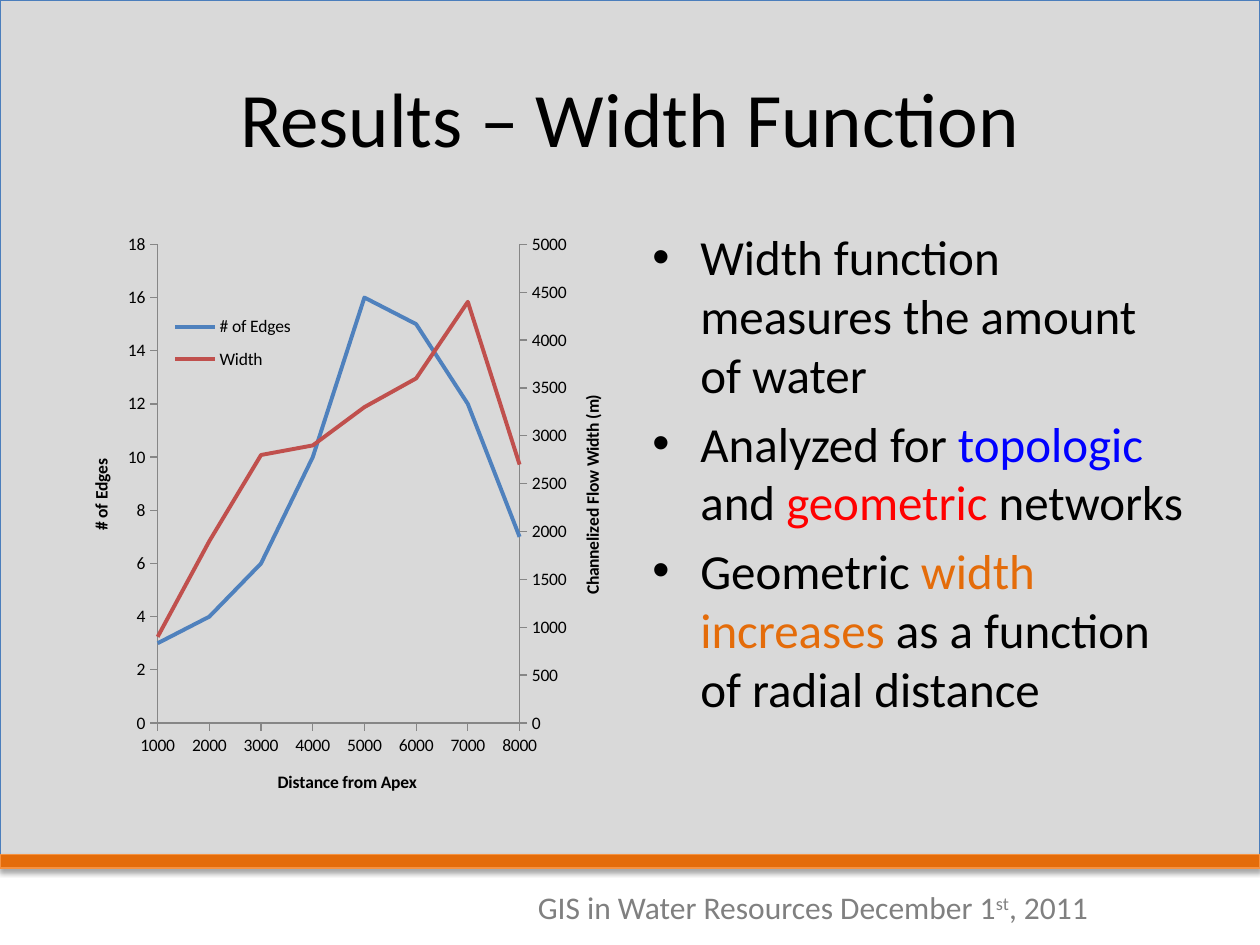
from copy import deepcopy

from lxml import etree
from pptx import Presentation
from pptx import util as u
from pptx.chart.data import CategoryChartData
from pptx.dml.color import RGBColor
from pptx.enum import chart as ch, shapes, text
from pptx.oxml import parse_xml
from pptx.oxml.ns import nsdecls, qn

COLORS = {
    "panel": "D9D9D9", "panel_line": "4B7EBC", "accent": "E46C0A", "accent_line": "F69240",
    "text": "000000", "footer": "808080", "topologic": "0000FF", "geometric": "FF0000",
    "edges": "4F81BD", "width": "C0504D", "axis": "868686",
}
DISTANCES = [str(1000 * step) for step in range(1, 9)]
EDGES = [3, 4, 6, 10, 16, 15, 12, 7]
WIDTHS = [900, 1900, 2800, 2900, 3300, 3600, 4400, 2700]


def color(name):
    return RGBColor.from_string(COLORS[name])


def inches(*lengths):
    return [u.Inches(length) for length in lengths]


def new_layout(element, x, y, w, h, inner=False):
    """Replace the layout of a chart part, in fractions of the chart."""
    target = '<c:layoutTarget val="inner"/>' if inner else ""
    sizes = "".join(f'<c:{tag} val="{value}"/>' for tag, value in zip("xywh", (x, y, w, h)))
    for old in element.findall(qn("c:layout")):
        element.remove(old)
    return parse_xml(
        f'<c:layout {nsdecls("c")}><c:manualLayout>{target}'
        f'<c:xMode val="edge"/><c:yMode val="edge"/>{sizes}</c:manualLayout></c:layout>')


def set_after(element, previous, tag, value):
    """Set a child's value, adding the child after the previous one if missing."""
    child = element.find(qn(tag))
    if child is None:
        child = parse_xml(f'<{tag} {nsdecls("c")}/>')
        element.find(qn(previous)).addnext(child)
    child.set("val", value)


class SlideBuilder:
    font = "Calibri"

    def __init__(self, deck):
        self.slide = deck.slides.add_slide(deck.slide_layouts[6])

    def band(self, top, height, fill, line):
        band = self.slide.shapes.add_shape(
            shapes.MSO_SHAPE.RECTANGLE, *inches(0, top, 10, height))
        band.shadow.inherit = False
        band.fill.solid()
        band.fill.fore_color.rgb = color(fill)
        band.line.color.rgb = color(line)
        band.line.width = u.Pt(0.75)
        effects = band._element.spPr.find(qn("a:effectLst"))
        effects.append(parse_xml(
            f'<a:outerShdw {nsdecls("a")} blurRad="{u.Pt(3.1)}" dist="{u.Pt(1.8)}" dir="5400000" '
            'rotWithShape="0"><a:srgbClr val="000000"><a:alpha val="35000"/></a:srgbClr>'
            '</a:outerShdw>'))

    def text(self, place, paragraphs, size, wrap=True, bullets=False, centered=False):
        """Each paragraph is a list of (wording, colour name, superscript)."""
        frame = self.slide.shapes.add_textbox(*inches(*place)).text_frame
        frame.word_wrap = wrap
        if centered:
            frame.vertical_anchor = text.MSO_ANCHOR.MIDDLE
        for index, spans in enumerate(paragraphs):
            para = frame.add_paragraph() if index else frame.paragraphs[0]
            if bullets:
                self.bullet(para)
            if index:
                para.space_before = u.Pt(size * 0.2)
            if centered:
                para.alignment = text.PP_ALIGN.CENTER
            for wording, tint, raised in spans:
                span = para.add_run()
                span.text = wording
                span.font.name = self.font
                span.font.size = u.Pt(size)
                span.font.color.rgb = color(tint)
                if raised:
                    span._r.get_or_add_rPr().set("baseline", "30000")

    def bullet(self, para):
        props = para._p.get_or_add_pPr()
        props.set("marL", str(u.Inches(0.38)))
        props.set("indent", str(-u.Inches(0.38)))
        etree.SubElement(props, qn("a:buFont")).set("typeface", "Arial")
        etree.SubElement(props, qn("a:buChar")).set("char", "•")

    def axis(self, axis, title):
        axis.has_major_gridlines = False
        axis.major_tick_mark = ch.XL_TICK_MARK.OUTSIDE
        axis.format.line.color.rgb = color("axis")
        axis.format.line.width = u.Pt(0.75)
        axis.axis_title.text_frame.text = title
        font = axis.axis_title.text_frame.paragraphs[0].runs[0].font
        font.name, font.size, font.bold = self.font, u.Pt(10), True
        font.color.rgb = color("text")

    def scale(self, axis, top, step, crosses):
        axis.minimum_scale, axis.maximum_scale, axis.major_unit = 0, top, step
        set_after(axis._element, "c:crossAx", "c:crosses", crosses)
        set_after(axis._element, "c:crosses", "c:crossBetween", "midCat")

    def chart(self, place):
        data = CategoryChartData()
        data.categories = DISTANCES
        data.add_series("# of Edges", EDGES)
        data.add_series("Width", WIDTHS)
        chart = self.slide.shapes.add_chart(
            ch.XL_CHART_TYPE.LINE, *inches(*place), data).chart
        chart.has_title = False
        chart.font.name, chart.font.size = self.font, u.Pt(10)
        chart.font.color.rgb = color("text")
        chart.plots[0].vary_by_categories = False
        for series, tint in zip(chart.plots[0].series, ("edges", "width")):
            series.smooth = False
            series.marker.style = ch.XL_MARKER_STYLE.NONE
            series.format.line.color.rgb = color(tint)
            series.format.line.width = u.Pt(2.25)
        self.axis(chart.category_axis, "Distance from Apex")
        self.axis(chart.value_axis, "# of Edges")
        self.scale(chart.value_axis, 18, 2, "autoZero")

        # Legend inside the plot
        chart.has_legend = True
        chart.legend.position = ch.XL_LEGEND_POSITION.LEFT
        chart.legend.include_in_layout = False
        legend = chart.legend._element
        legend.find(qn("c:legendPos")).addnext(new_layout(legend, 0.19, 0.14, 0.23, 0.13))
        self.right_axis(chart)

    def right_axis(self, chart):
        """Move the second series to its own line plot with an axis on the right."""
        area = chart._chartSpace.chart.plotArea
        area.insert(0, new_layout(area, 0.17, 0.04, 0.65, 0.8, inner=True))
        left_plot = area.find(qn("c:lineChart"))
        right_plot = deepcopy(left_plot)
        left_plot.remove(left_plot.findall(qn("c:ser"))[1])
        right_plot.remove(right_plot.findall(qn("c:ser"))[0])
        left_plot.addnext(right_plot)

        left_value, category = area.find(qn("c:valAx")), area.find(qn("c:catAx"))
        right_value, hidden = deepcopy(left_value), deepcopy(category)
        left_value.addnext(right_value)
        right_value.addnext(hidden)
        new_ids = {category.find(qn("c:axId")).get("val"): "5001",
                   left_value.find(qn("c:axId")).get("val"): "5002"}
        for part in (right_plot, right_value, hidden):
            for tag in ("c:axId", "c:crossAx"):
                for node in part.findall(qn(tag)):
                    node.set("val", new_ids[node.get("val")])
        hidden_axis = type(chart.category_axis)(hidden)
        hidden_axis.visible = False
        hidden_axis.has_title = False
        right_value.find(qn("c:axPos")).set("val", "r")
        right = type(chart.value_axis)(right_value)
        self.axis(right, "Channelized Flow Width (m)")
        self.scale(right, 5000, 500, "max")


def main():
    deck = Presentation()
    deck.slide_width, deck.slide_height = inches(10, 7.5)
    page = SlideBuilder(deck)

    # Background panel, accent bar and footer
    page.band(0, 6.78, "panel", "panel_line")
    page.band(6.78, 0.11, "accent", "accent_line")
    footer = [("GIS in Water Resources December 1", "footer", False),
              ("st", "footer", True), (", 2011", "footer", False)]
    page.text((4.17, 7, 4.65, 0.4), [footer], 18, wrap=False)

    # Title and findings
    page.text((0.5, 0.3, 9, 1.25), [[("Results – Width Function", "text", False)]], 44,
              centered=True)
    findings = [
        [("Width function measures the amount of water", "text", False)],
        [("Analyzed for ", "text", False), ("topologic", "topologic", False),
         (" and ", "text", False), ("geometric", "geometric", False),
         (" networks", "text", False)],
        [("Geometric ", "text", False), ("width increases ", "accent", False),
         ("as a function of radial distance", "text", False)],
    ]
    page.text((5.08, 1.75, 4.42, 4.75), findings, 28, bullets=True)

    # Edge count and flow width by distance
    page.chart((0.5, 1.75, 4.42, 4.75))
    deck.save("out.pptx")


if __name__ == "__main__":
    main()
